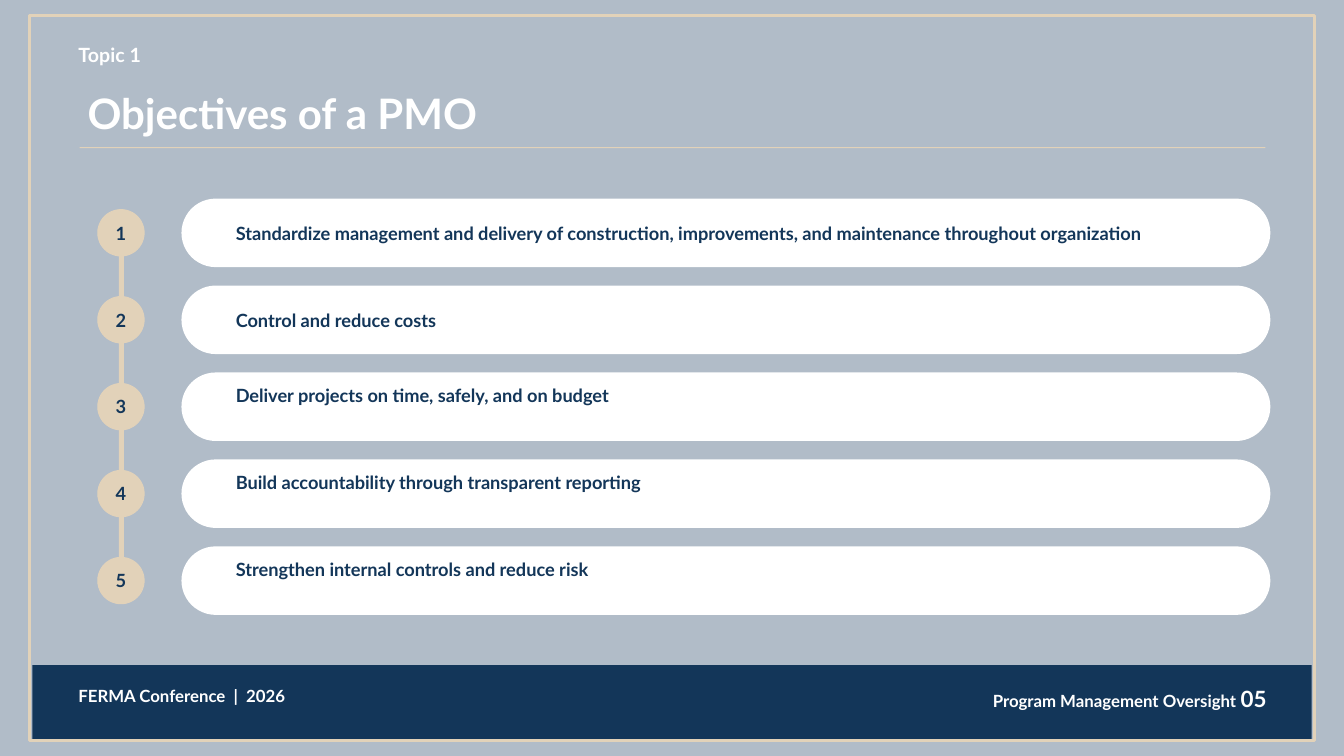
from pptx import Presentation
from pptx.dml.color import RGBColor
from pptx.enum.shapes import MSO_SHAPE
from pptx.enum.text import MSO_ANCHOR, PP_ALIGN
from pptx.util import Inches, Pt

NAVY = RGBColor(0x13, 0x36, 0x59)
SAND = RGBColor(0xE2, 0xD2, 0xB9)
MIST = RGBColor(0xB1, 0xBC, 0xC8)
WHITE = RGBColor(0xFF, 0xFF, 0xFF)

# Each objective with the bottom inset of its text: a larger one raises the line.
OBJECTIVES = [
    ("Standardize management and delivery of construction, improvements, "
     "and maintenance throughout organization", 0.05),
    ("Control and reduce costs", 0.05),
    ("Deliver projects on time, safely, and on budget", 0.27),
    ("Build accountability through transparent reporting", 0.27),
    ("Strengthen internal controls and reduce risk", 0.27),
]
FIRST_ROW_TOP = 1.97
LAST_ROW_TOP = 5.42
ROW_PITCH = (LAST_ROW_TOP - FIRST_ROW_TOP) / (len(OBJECTIVES) - 1)
ROW_HEIGHT = 0.68
BADGE_SIZE = 0.46


class SlideBuilder:
    font_name = "Lato"

    def __init__(self, slide):
        self.slide = slide

    def add_shape(self, kind, left, top, width, height, fill=None, line=None, line_width=0.75):
        shape = self.slide.shapes.add_shape(
            kind, Inches(left), Inches(top), Inches(width), Inches(height))
        shape.shadow.inherit = False
        if fill is None:
            shape.fill.background()
        else:
            shape.fill.solid()
            shape.fill.fore_color.rgb = fill
        if line is None:
            shape.line.fill.background()
        else:
            shape.line.color.rgb = line
            shape.line.width = Pt(line_width)
        return shape

    def add_rectangle(self, *box, **style):
        return self.add_shape(MSO_SHAPE.RECTANGLE, *box, **style)

    def add_pill(self, *box, fill):
        pill = self.add_shape(MSO_SHAPE.ROUNDED_RECTANGLE, *box, fill=fill)
        pill.adjustments[0] = 0.5

    def add_badge(self, left, top, label):
        badge = self.add_shape(
            MSO_SHAPE.OVAL, left, top, BADGE_SIZE, BADGE_SIZE, fill=SAND, line=SAND)
        frame = badge.text_frame
        frame.margin_left = frame.margin_right = frame.margin_top = frame.margin_bottom = 0
        frame.vertical_anchor = MSO_ANCHOR.MIDDLE
        self.add_runs(frame, [(label, 13)], NAVY, PP_ALIGN.CENTER)

    def add_text(self, left, top, width, height, runs, color=WHITE,
                 align=PP_ALIGN.LEFT, anchor=MSO_ANCHOR.TOP, bottom_inset=0.05):
        box = self.slide.shapes.add_textbox(
            Inches(left), Inches(top), Inches(width), Inches(height))
        frame = box.text_frame
        frame.word_wrap = True
        frame.vertical_anchor = anchor
        frame.margin_bottom = Inches(bottom_inset)
        self.add_runs(frame, runs, color, align)

    def add_runs(self, frame, runs, color, align):
        """Fill the first paragraph with (text, point size) runs."""
        paragraph = frame.paragraphs[0]
        paragraph.alignment = align
        for text, size in runs:
            run = paragraph.add_run()
            run.text = text
            run.font.name = self.font_name
            run.font.size = Pt(size)
            run.font.bold = True
            run.font.color.rgb = color

    def add_objective(self, index, text, bottom_inset):
        top = FIRST_ROW_TOP + index * ROW_PITCH
        self.add_pill(1.8, top, 10.8, ROW_HEIGHT, fill=WHITE)
        self.add_badge(0.97, top + (ROW_HEIGHT - BADGE_SIZE) / 2, str(index + 1))
        self.add_text(2.24, top, 10.06, ROW_HEIGHT, [(text, 13)], NAVY,
                      anchor=MSO_ANCHOR.MIDDLE, bottom_inset=bottom_inset)


def main():
    presentation = Presentation()
    presentation.slide_width = Inches(13.33)
    presentation.slide_height = Inches(7.5)
    builder = SlideBuilder(presentation.slides.add_slide(presentation.slide_layouts[6]))

    builder.add_rectangle(0, 0, 13.33, 7.5, fill=MIST)
    builder.add_rectangle(0.32, 6.6, 12.69, 0.73, fill=NAVY)
    builder.add_text(0.68, 6.75, 3.9, 0.4, [("FERMA Conference  |  2026", 12)])
    builder.add_text(8.46, 6.75, 4.2, 0.4,
                     [("Program Management Oversight ", 12), ("05", 16)],
                     align=PP_ALIGN.RIGHT)
    builder.add_rectangle(0.29, 0.15, 12.75, 7.2, line=SAND, line_width=2.25)

    builder.add_text(0.68, 0.38, 10.39, 0.33, [("Topic 1", 14)])
    builder.add_text(0.77, 0.82, 10.88, 0.61, [("Objectives of a PMO", 30)])
    builder.add_rectangle(0.79, 1.46, 11.76, 0.01, fill=SAND)

    builder.add_rectangle(1.18, 2.13, 0.05, 3.81, fill=SAND)
    for index, (text, bottom_inset) in enumerate(OBJECTIVES):
        builder.add_objective(index, text, bottom_inset)

    presentation.save("out.pptx")


if __name__ == "__main__":
    main()
